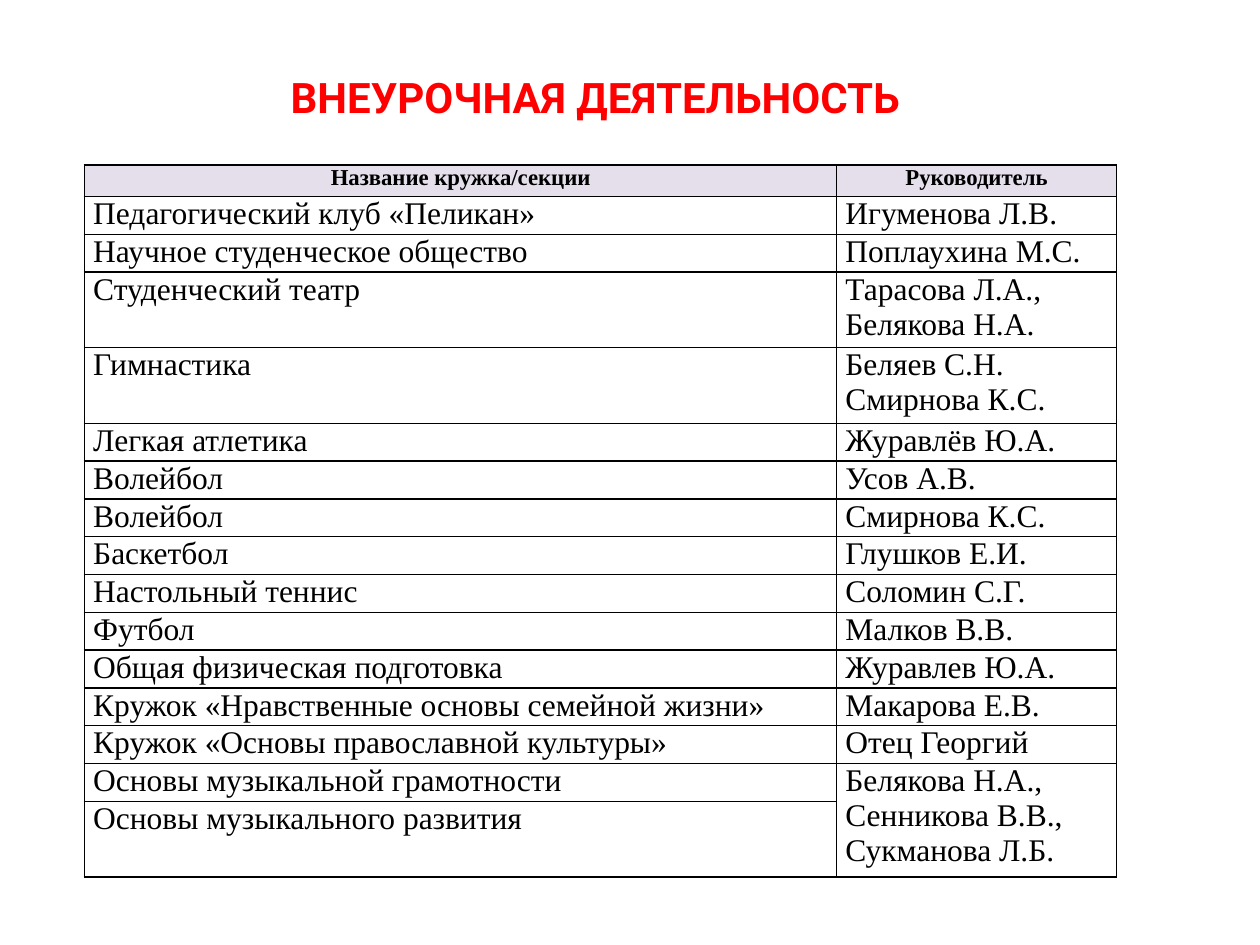
from dataclasses import dataclass

from lxml.etree import SubElement
from pptx import Presentation
from pptx.dml.color import RGBColor
from pptx.enum.text import MSO_ANCHOR, MSO_AUTO_SIZE, PP_ALIGN
from pptx.oxml.ns import qn
from pptx.util import Inches, Pt


@dataclass(frozen=True)
class Theme:
    title_font: str = "Roboto"
    table_font: str = "Times New Roman"
    title_size: int = 24
    header_size: int = 13
    body_size: int = 18
    border_width: int = 1
    title_color: str = "FF0000"
    text_color: str = "000000"
    border_color: str = "000000"
    header_fill: str = "E5DFEC"


THEME = Theme()

HEADINGS = ("Название кружка/секции", "Руководитель")
CLUBS = [
    ("Педагогический клуб «Пеликан»", "Игуменова Л.В."),
    ("Научное студенческое общество", "Поплаухина М.С."),
    ("Студенческий театр", "Тарасова Л.А., Белякова Н.А."),
    ("Гимнастика", "Беляев С.Н.\nСмирнова К.С."),
    ("Легкая атлетика", "Журавлёв Ю.А."),
    ("Волейбол", "Усов А.В."),
    ("Волейбол", "Смирнова К.С."),
    ("Баскетбол", "Глушков Е.И."),
    ("Настольный теннис", "Соломин С.Г."),
    ("Футбол", "Малков В.В."),
    ("Общая физическая подготовка", "Журавлев Ю.А."),
    ("Кружок «Нравственные основы семейной жизни»", "Макарова Е.В."),
    ("Кружок «Основы православной культуры»", "Отец Георгий"),
    ("Основы музыкальной грамотности", "Белякова Н.А., Сенникова В.В., Сукманова Л.Б."),
    ("Основы музыкального развития", ""),
]
TALL_ROWS = {3, 4, 15}
HEADER_HEIGHT, ROW_HEIGHT = 0.25, 0.3
LEADER_WIDTH = 2.22


def add_text(paragraph, text, font_name, size, color, bold, align):
    paragraph.alignment = align
    run = paragraph.add_run()
    run.text = text
    run.font.name = font_name
    run.font.size = Pt(size)
    run.font.bold = bold
    run.font.color.rgb = RGBColor.from_string(color)


def place_title(slide, left, top, width, height):
    title = slide.shapes.title
    title.left, title.top = Inches(left), Inches(top)
    title.width, title.height = Inches(width), Inches(height)
    frame = title.text_frame
    frame.word_wrap = True
    frame.auto_size = MSO_AUTO_SIZE.NONE
    frame.vertical_anchor = MSO_ANCHOR.TOP
    add_text(frame.paragraphs[0], "ВНЕУРОЧНАЯ ДЕЯТЕЛЬНОСТЬ", THEME.title_font,
             THEME.title_size, THEME.title_color, True, PP_ALIGN.CENTER)


def draw_borders(cell):
    properties = cell._tc.get_or_add_tcPr()
    for side in ("a:lnL", "a:lnR", "a:lnT", "a:lnB"):
        border = SubElement(properties, qn(side), w=str(Pt(THEME.border_width)))
        fill = SubElement(border, qn("a:solidFill"))
        SubElement(fill, qn("a:srgbClr"), val=THEME.border_color)


def format_cell(cell, text, is_header):
    cell.margin_left = cell.margin_right = Inches(0.07)
    cell.margin_top = cell.margin_bottom = 0
    draw_borders(cell)
    if is_header:
        cell.fill.solid()
        cell.fill.fore_color.rgb = RGBColor.from_string(THEME.header_fill)
    else:
        cell.fill.background()
    if not text:
        return
    frame = cell.text_frame
    for index, line in enumerate(text.split("\n")):
        paragraph = frame.add_paragraph() if index else frame.paragraphs[0]
        add_text(paragraph, line, THEME.table_font,
                 THEME.header_size if is_header else THEME.body_size,
                 THEME.text_color, is_header,
                 PP_ALIGN.CENTER if is_header else PP_ALIGN.LEFT)


def place_clubs(slide, left, top, width):
    entries = [HEADINGS, *CLUBS]
    heights = [HEADER_HEIGHT] + [
        ROW_HEIGHT * (2 if row in TALL_ROWS else 1) for row in range(1, len(entries))
    ]
    table = slide.shapes.add_table(
        len(entries), len(HEADINGS), Inches(left), Inches(top),
        Inches(width), Inches(sum(heights))).table
    table.columns[0].width = Inches(width - LEADER_WIDTH)
    table.columns[1].width = Inches(LEADER_WIDTH)
    for row, (entry, height) in enumerate(zip(entries, heights)):
        table.rows[row].height = Inches(height)
        for column, text in enumerate(entry):
            format_cell(table.cell(row, column), text, row == 0)
    last = len(entries) - 1
    table.cell(last - 1, 1).merge(table.cell(last, 1))


def main():
    deck = Presentation()
    deck.slide_width, deck.slide_height = Inches(10), Inches(7.5)
    slide = deck.slides.add_slide(deck.slide_layouts[5])
    place_title(slide, 1.77, 0.52, 5.91, 0.5)
    place_clubs(slide, 0.67, 1.31, 8.19)
    deck.save("out.pptx")


if __name__ == "__main__":
    main()
